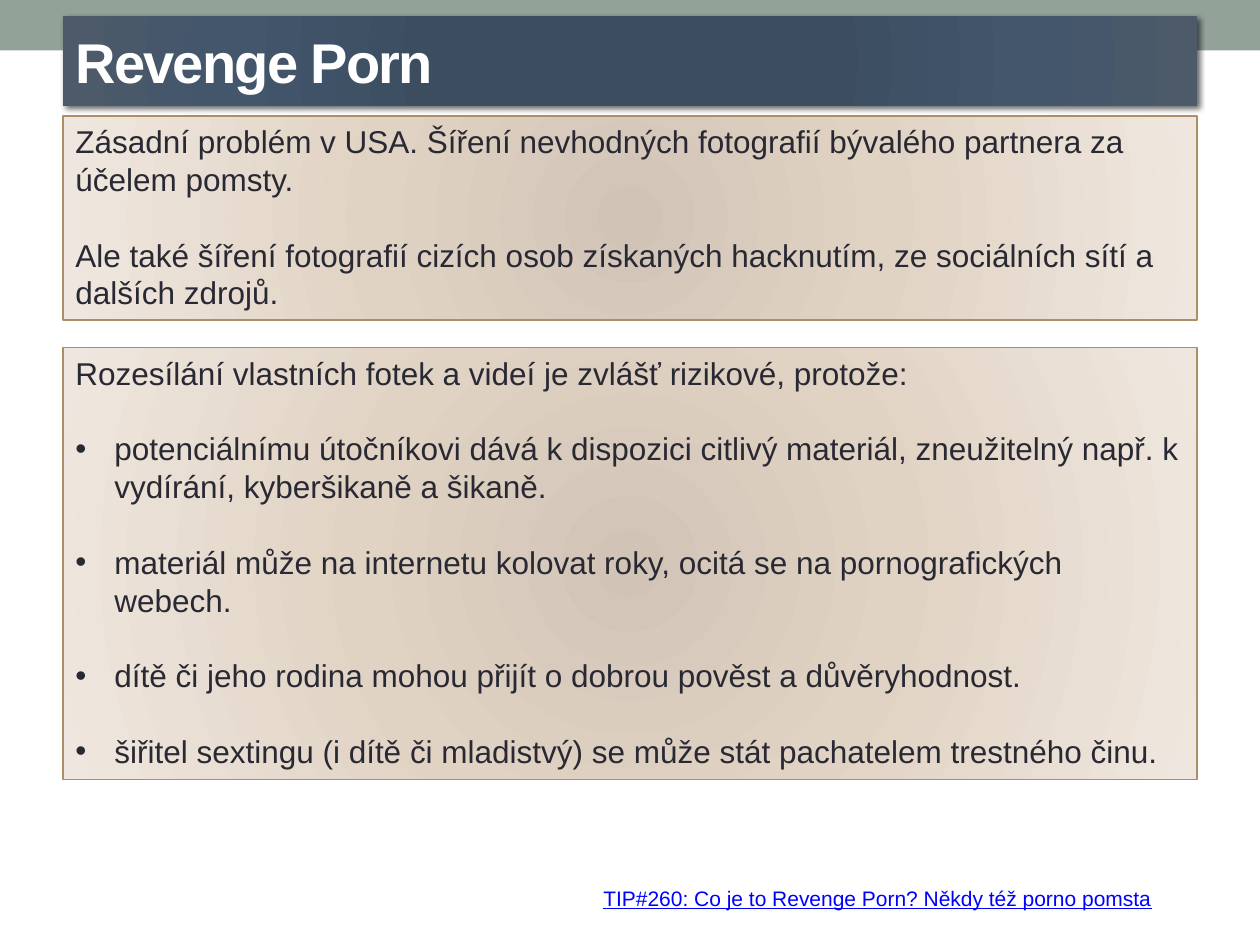
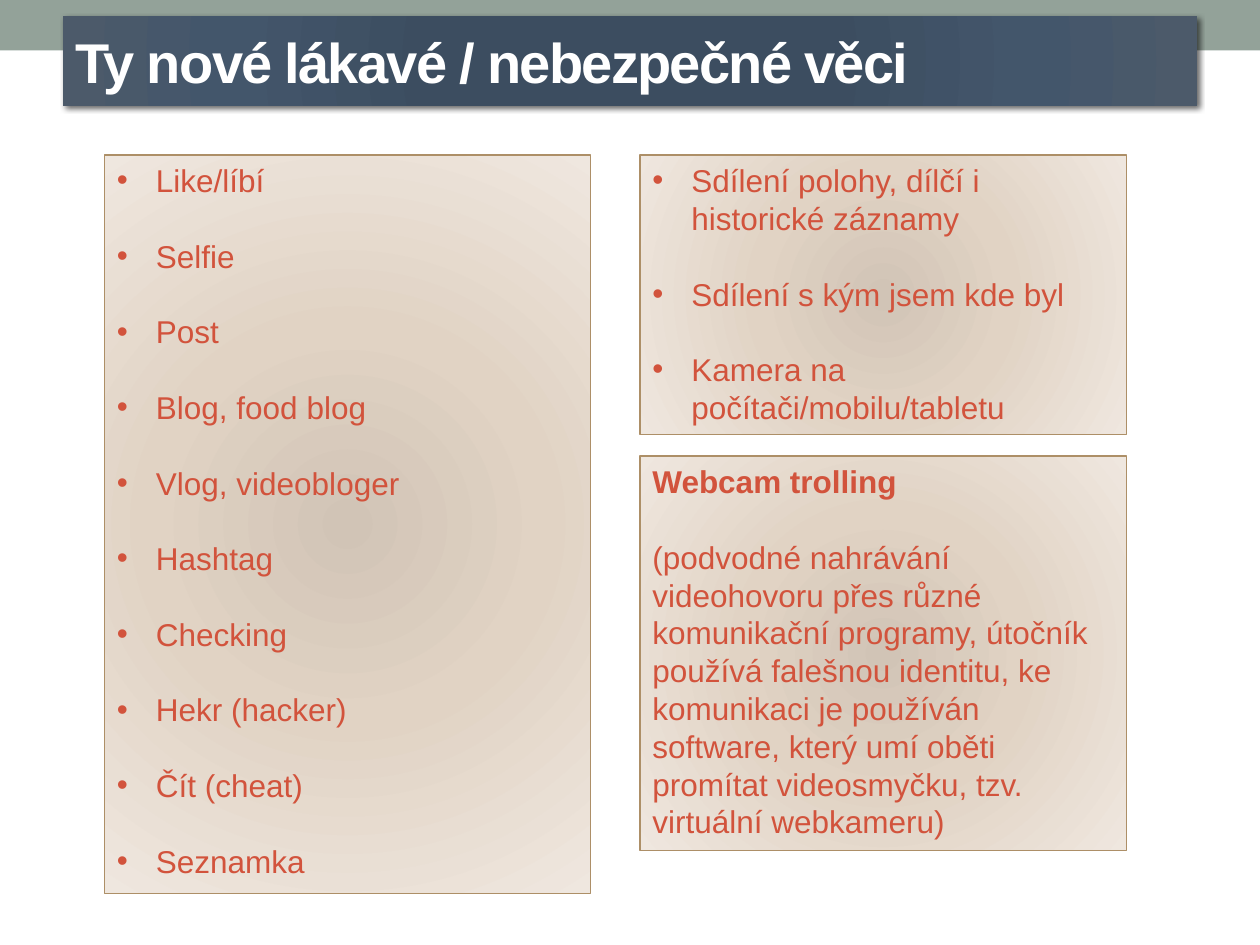
from lxml import etree
from pptx import Presentation
from pptx.dml.color import RGBColor
from pptx.enum.shapes import MSO_SHAPE
from pptx.enum.text import MSO_ANCHOR, MSO_AUTO_SIZE, PP_ALIGN
from pptx.oxml import parse_xml
from pptx.oxml.ns import nsdecls, qn
from pptx.util import Inches, Pt

FONT = "Arial"
BODY_SIZE = 18
INDENT = Inches(0.31)
PARAGRAPH_GAP = Pt(21.6)

SAGE = RGBColor(0x93, 0xA2, 0x99)
WHITE = RGBColor(0xFF, 0xFF, 0xFF)
INK = RGBColor(0x29, 0x29, 0x34)
CORAL = RGBColor(0xD2, 0x53, 0x3C)
LINK_BLUE = RGBColor(0x00, 0x00, 0xFF)
TAN = RGBColor(0xAD, 0x8F, 0x67)
SLATE_STOPS = [(0, RGBColor(0x3B, 0x4D, 0x61)), (34, RGBColor(0x3C, 0x4D, 0x60)),
               (70, RGBColor(0x43, 0x56, 0x6B)), (100, RGBColor(0x4C, 0x5A, 0x6A))]
SAND_STOPS = [(0, RGBColor(0xD1, 0xC4, 0xB6)), (45, RGBColor(0xE1, 0xD3, 0xC4)),
              (100, RGBColor(0xEF, 0xE7, 0xDF))]

SLIDE_W, SLIDE_H = Inches(10), Inches(7.5)
MARGIN, FULL_W = 0.5, 9
COLUMN_LEFT, COLUMN_W, COLUMN_STEP = 0.83, 3.86, 4.25
COLUMN_TOP = 1.23


def add_rect(s, box):
    sp = s.shapes.add_shape(MSO_SHAPE.RECTANGLE, *(Inches(v) for v in box))
    sp.shadow.inherit = False
    sp.line.fill.background()
    return sp


def fill_radial(sp, stops):
    """Replace the fill with a gradient that runs outwards from the centre."""
    gs = "".join(f'<a:gs pos="{pos * 1000}"><a:srgbClr val="{color}"/></a:gs>'
                 for pos, color in stops)
    grad = parse_xml(
        f'<a:gradFill {nsdecls("a")} rotWithShape="1"><a:gsLst>{gs}</a:gsLst>'
        '<a:path path="circle"><a:fillToRect l="100000" t="100000" r="100000" b="100000"/>'
        '</a:path></a:gradFill>')
    sp._element.spPr.find(qn("a:prstGeom")).addnext(grad)


def add_shadow(sp):
    effects = sp._element.spPr.find(qn("a:effectLst"))
    effects.append(parse_xml(
        f'<a:outerShdw {nsdecls("a")} blurRad="{Pt(3)}" dist="{Pt(2)}" dir="2700000">'
        '<a:srgbClr val="000000"><a:alpha val="60000"/></a:srgbClr></a:outerShdw>'))


def write(p, text, size=BODY_SIZE, color=INK, bold=False, underline=False, tracking=0):
    p.alignment = PP_ALIGN.LEFT
    r = p.add_run()
    r.text = text
    r.font.name, r.font.size, r.font.bold = FONT, Pt(size), bold
    r.font.underline = underline
    r.font.color.rgb = color
    if tracking:
        r._r.get_or_add_rPr().set("spc", str(tracking * 100))


def add_bullet(p):
    pPr = p._p.get_or_add_pPr()
    pPr.set("marL", str(INDENT))
    pPr.set("indent", str(-INDENT))
    etree.SubElement(pPr, qn("a:buFont")).set("typeface", FONT)
    etree.SubElement(pPr, qn("a:buChar")).set("char", "•")


def header(s, title):
    band = add_rect(s, (0, 0, 10, 0.4))
    band.fill.solid()
    band.fill.fore_color.rgb = SAGE
    bar = add_rect(s, (MARGIN, 0.13, FULL_W, 0.71))
    fill_radial(bar, SLATE_STOPS)
    add_shadow(bar)
    bar.text_frame.vertical_anchor = MSO_ANCHOR.MIDDLE
    write(bar.text_frame.paragraphs[0], title, size=32, color=WHITE, bold=True, tracking=-1)


def panel(s, box, intro=(), bullets=(), color=INK, bold_first=False):
    """Sand box with plain paragraphs followed by bulleted ones."""
    sp = add_rect(s, box)
    fill_radial(sp, SAND_STOPS)
    sp.line.color.rgb = TAN
    sp.line.width = Pt(0.75)
    tf = sp.text_frame
    tf.word_wrap = True
    tf.auto_size = MSO_AUTO_SIZE.SHAPE_TO_FIT_TEXT
    tf.vertical_anchor = MSO_ANCHOR.TOP
    for i, text in enumerate([*intro, *bullets]):
        p = tf.add_paragraph() if i else tf.paragraphs[0]
        if i:
            p.space_before = PARAGRAPH_GAP
        write(p, text, color=color, bold=bold_first and i == 0)
        if i >= len(intro):
            add_bullet(p)


def tip(s, box, text):
    tf = s.shapes.add_textbox(*(Inches(v) for v in box)).text_frame
    tf.word_wrap = True
    tf.auto_size = MSO_AUTO_SIZE.SHAPE_TO_FIT_TEXT
    write(tf.paragraphs[0], text, size=12, color=LINK_BLUE, underline=True)


def revenge_slide(s):
    header(s, "Revenge Porn")
    panel(s, (MARGIN, 0.92, FULL_W, 1.62), intro=[
        "Zásadní problém v USA. Šíření nevhodných fotografií bývalého partnera za účelem pomsty.",
        "Ale také šíření fotografií cizích osob získaných hacknutím, ze sociálních sítí a "
        "dalších zdrojů."])
    panel(s, (MARGIN, 2.76, FULL_W, 3.43),
          intro=["Rozesílání vlastních fotek a videí je zvlášť rizikové, protože:"],
          bullets=[
              "potenciálnímu útočníkovi dává k dispozici citlivý materiál, zneužitelný např. k "
              "vydírání, kyberšikaně a šikaně.",
              "materiál může na internetu kolovat roky, ocitá se na pornografických webech.",
              "dítě či jeho rodina mohou přijít o dobrou pověst a důvěryhodnost.",
              "šiřitel sextingu (i dítě či mladistvý) se může stát pachatelem trestného činu."])
    tip(s, (4.69, 6.98, 5, 0.3), "TIP#260: Co je to Revenge Porn? Někdy též porno pomsta")


def temptations_slide(s):
    header(s, "Ty nové lákavé / nebezpečné věci")
    right = COLUMN_LEFT + COLUMN_STEP
    panel(s, (COLUMN_LEFT, COLUMN_TOP, COLUMN_W, 5.86), color=CORAL, bullets=[
        "Like/líbí", "Selfie", "Post", "Blog, food blog", "Vlog, videobloger", "Hashtag",
        "Checking", "Hekr (hacker)", "Čít (cheat)", "Seznamka"])
    panel(s, (right, COLUMN_TOP, COLUMN_W, 2.22), color=CORAL, bullets=[
        "Sdílení polohy, dílčí i historické záznamy",
        "Sdílení s kým jsem kde byl",
        "Kamera na počítači/mobilu/tabletu"])
    panel(s, (right, 3.62, COLUMN_W, 3.13), color=CORAL, bold_first=True, intro=[
        "Webcam trolling",
        "(podvodné nahrávání videohovoru přes různé komunikační programy, útočník používá "
        "falešnou identitu, ke komunikaci je používán software, který umí oběti promítat "
        "videosmyčku, tzv. virtuální webkameru)"])


def main():
    prs = Presentation()
    prs.slide_width, prs.slide_height = SLIDE_W, SLIDE_H
    for build in (revenge_slide, temptations_slide):
        build(prs.slides.add_slide(prs.slide_layouts[6]))
    prs.save("out.pptx")


if __name__ == "__main__":
    main()
